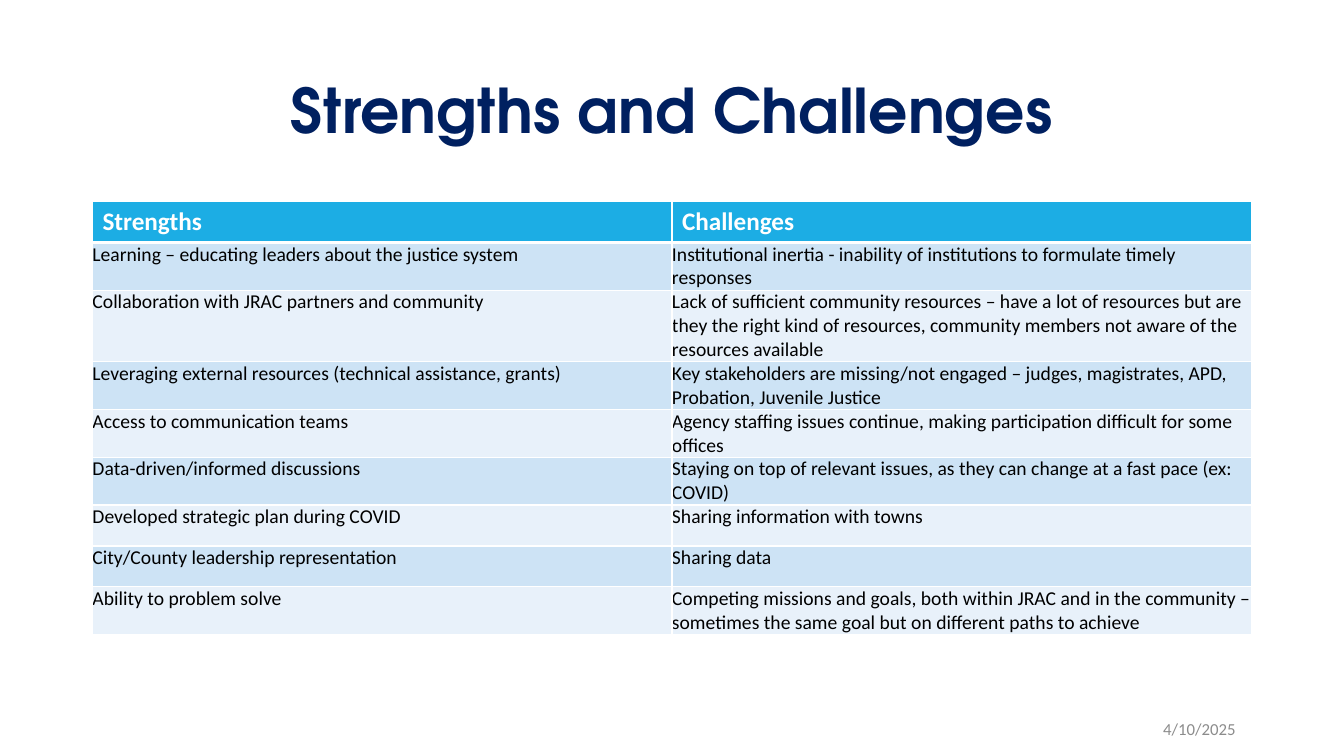
from lxml import etree
from pptx import Presentation
from pptx.dml.color import RGBColor
from pptx.enum.text import MSO_ANCHOR, PP_ALIGN
from pptx.oxml.ns import qn
from pptx.util import Cm, Pt

MIDDLE = MSO_ANCHOR.MIDDLE
LEFT, CENTER, RIGHT = PP_ALIGN.LEFT, PP_ALIGN.CENTER, PP_ALIGN.RIGHT

TITLE_ONLY = 5
MARGIN = Cm(2.33)
CONTENT_WIDTH = Cm(29.21)
ROW_HEIGHT = Cm(1.03)
HEADER_FILL = "1CADE4"
BAND_FILLS = ("CDE3F5", "E8F1FA")

HEADINGS = ("Strengths", "Challenges")
ROWS = (
    ("Learning – educating leaders about the justice system",
     "Institutional inertia - inability of institutions to formulate timely responses"),
    ("Collaboration with JRAC partners and community",
     "Lack of sufficient community resources – have a lot of resources but are they "
     "the right kind of resources, community members not aware of the resources available"),
    ("Leveraging external resources (technical assistance, grants)",
     "Key stakeholders are missing/not engaged – judges, magistrates, APD, "
     "Probation, Juvenile Justice"),
    ("Access to communication teams",
     "Agency staffing issues continue, making participation difficult for some offices"),
    ("Data-driven/informed discussions",
     "Staying on top of relevant issues, as they can change at a fast pace (ex: COVID)"),
    ("Developed strategic plan during COVID", "Sharing information with towns"),
    ("City/County leadership representation", "Sharing data"),
    ("Ability to problem solve",
     "Competing missions and goals, both within JRAC and in the community – "
     "sometimes the same goal but on different paths to achieve"),
)


def color(value):
    return RGBColor.from_string(value)


def write(frame, text, size, value, align=LEFT, bold=False, font="Calibri"):
    para = frame.paragraphs[0]
    para.alignment = align
    span = para.add_run()
    span.text = text
    span.font.name = font
    span.font.size = Pt(size)
    span.font.bold = bold
    span.font.color.rgb = color(value)
    return para


def place(box, left, top, width, height):
    box.left, box.top, box.width, box.height = left, top, width, height


def add_borders(cell, bottom_width):
    properties = cell._tc.get_or_add_tcPr()
    for side, width in (("L", 1), ("R", 1), ("T", 1), ("B", bottom_width)):
        line = etree.SubElement(properties, qn(f"a:ln{side}"), w=str(Pt(width)))
        fill = etree.SubElement(line, qn("a:solidFill"))
        etree.SubElement(fill, qn("a:srgbClr"), val="FFFFFF")


def style_cell(cell, fill, bottom_width=1):
    add_borders(cell, bottom_width)
    cell.fill.solid()
    cell.fill.fore_color.rgb = color(fill)


def add_title(page):
    box = page.shapes.title
    place(box, MARGIN, Cm(1.01), CONTENT_WIDTH, Cm(3.68))
    box.text_frame.vertical_anchor = MIDDLE
    para = write(box.text_frame, "Strengths and Challenges", 44, "002060",
                 CENTER, True, "TeX Gyre Adventor")
    para.line_spacing = 0.9


def add_comparison(page):
    count = len(ROWS) + 1
    table = page.shapes.add_table(count, len(HEADINGS), MARGIN, Cm(5.08),
                                  CONTENT_WIDTH, ROW_HEIGHT * count).table
    for column, heading in enumerate(HEADINGS):
        cell = table.cell(0, column)
        style_cell(cell, HEADER_FILL, 3)
        write(cell.text_frame, heading, 18, "FFFFFF", bold=True)
    for row, texts in enumerate(ROWS, 1):
        for column, text in enumerate(texts):
            cell = table.cell(row, column)
            cell.margin_left = cell.margin_right = 0
            cell.margin_top = cell.margin_bottom = 0
            style_cell(cell, BAND_FILLS[(row - 1) % 2])
            write(cell.text_frame, text, 14, "000000")


def add_date(page):
    box = page.shapes.add_textbox(Cm(23.77), Cm(17.86), Cm(7.62), Cm(1.01))
    box.text_frame.word_wrap = True
    box.text_frame.vertical_anchor = MIDDLE
    write(box.text_frame, "4/10/2025", 12, "8C8C8C", RIGHT)


def main():
    deck = Presentation()
    deck.slide_width, deck.slide_height = Cm(33.87), Cm(19.05)
    page = deck.slides.add_slide(deck.slide_layouts[TITLE_ONLY])
    add_title(page)
    add_comparison(page)
    add_date(page)
    deck.save("out.pptx")


if __name__ == "__main__":
    main()
